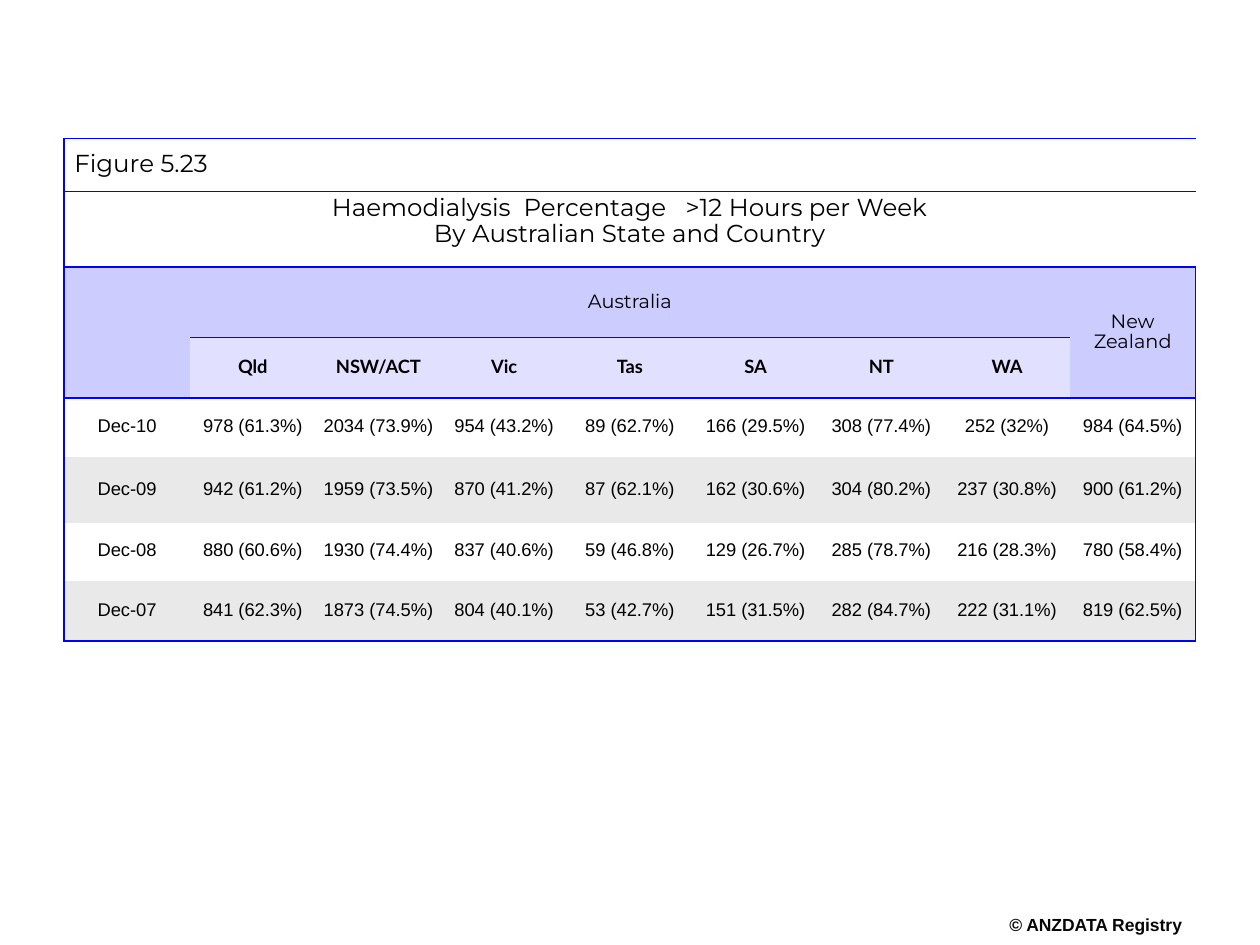
from lxml import etree
from pptx import Presentation
from pptx.dml.color import RGBColor
from pptx.enum import text
from pptx.oxml import ns
from pptx.util import Inches, Pt

BLACK = RGBColor(0x00, 0x00, 0x00)
NEAR_BLACK = RGBColor(0x08, 0x08, 0x08)
BLUE = RGBColor(0x00, 0x00, 0xFF)
LAVENDER = RGBColor(0xCC, 0xCC, 0xFF)
PALE_LAVENDER = RGBColor(0xE1, 0xE1, 0xFF)
GREY = RGBColor(0xE9, 0xE9, 0xE9)

FIGURE = "Figure 5.23"
TITLE = ["Haemodialysis  Percentage   >12 Hours per Week", "By Australian State and Country"]
STATES = ["Qld", "NSW/ACT", "Vic", "Tas", "SA", "NT", "WA"]
HOURS = [
    ["Dec-10", "978 (61.3%)", "2034 (73.9%)", "954 (43.2%)", "89 (62.7%)", "166 (29.5%)",
     "308 (77.4%)", "252 (32%)", "984 (64.5%)"],
    ["Dec-09", "942 (61.2%)", "1959 (73.5%)", "870 (41.2%)", "87 (62.1%)", "162 (30.6%)",
     "304 (80.2%)", "237 (30.8%)", "900 (61.2%)"],
    ["Dec-08", "880 (60.6%)", "1930 (74.4%)", "837 (40.6%)", "59 (46.8%)", "129 (26.7%)",
     "285 (78.7%)", "216 (28.3%)", "780 (58.4%)"],
    ["Dec-07", "841 (62.3%)", "1873 (74.5%)", "804 (40.1%)", "53 (42.7%)", "151 (31.5%)",
     "282 (84.7%)", "222 (31.1%)", "819 (62.5%)"],
]
COPYRIGHT = "© ANZDATA Registry"

ROW_HEIGHTS = [0.42, 0.6, 0.56, 0.48, 0.47, 0.52, 0.46, 0.48]
COLUMN_COUNT = len(HOURS[0])
LAST_COLUMN = COLUMN_COUNT - 1
LAST_ROW = len(ROW_HEIGHTS) - 1
HEADER_ROW, STATE_ROW, FIRST_DATA_ROW = 2, 3, 4
MERGES = [
    ((0, 0), (0, LAST_COLUMN)),
    ((1, 0), (1, LAST_COLUMN)),
    ((HEADER_ROW, 0), (STATE_ROW, 0)),
    ((HEADER_ROW, 1), (HEADER_ROW, LAST_COLUMN - 1)),
    ((HEADER_ROW, LAST_COLUMN), (STATE_ROW, LAST_COLUMN)),
]
NO_STYLE = "{2D5ABB26-0587-4C30-8999-92F81FD0307C}"

HEADING_FONT = {"name": "Montserrat", "size": Pt(14), "bold": False}
GROUP_FONT = {"name": "Montserrat", "size": Pt(11), "bold": False}
STATE_FONT = {"name": "Lato", "size": Pt(10.5), "bold": True}
DATA_FONT = {"name": "Arial", "size": Pt(10.5), "bold": False}
FOOTER_FONT = {"name": "Arial", "size": Pt(10), "bold": True}
CENTERED = {"alignment": text.PP_ALIGN.CENTER, "line_spacing": 0.85}
LEFT = {"alignment": text.PP_ALIGN.LEFT, "line_spacing": 0.85}
DATA_PARAGRAPH = {**CENTERED, "space_after": Pt(14)}
SIDES = ("left", "right", "top", "bottom")
CELL_FRAME = {f"margin_{side}": Inches(0.04) for side in SIDES}
CELL_FRAME["vertical_anchor"] = text.MSO_ANCHOR.MIDDLE
FIGURE_FRAME = {**CELL_FRAME, "margin_left": Inches(0.08), "margin_right": Inches(0.08),
                "margin_top": 0, "margin_bottom": 0}
TITLE_FRAME = {**CELL_FRAME, "vertical_anchor": text.MSO_ANCHOR.TOP}
FOOTER_FRAME = {f"margin_{side}": 0 for side in SIDES}
FOOTER_FRAME.update(word_wrap=False, auto_size=text.MSO_AUTO_SIZE.SHAPE_TO_FIT_TEXT)


def apply(target, values):
    for name, value in values.items():
        setattr(target, name, value)


def write_lines(text_frame, lines, font, paragraph_format, color=BLACK):
    for index, line in enumerate(lines):
        paragraph = text_frame.paragraphs[0] if index == 0 else text_frame.add_paragraph()
        apply(paragraph, paragraph_format)
        run = paragraph.add_run()
        run.text = line
        apply(run.font, font)
        run.font.color.rgb = color


def set_borders(cell, row, column):
    edge_column = column in (0, LAST_COLUMN)
    visible = {
        "lnL": column == 0,
        "lnR": column == LAST_COLUMN,
        "lnT": row <= FIRST_DATA_ROW and not (edge_column and row == STATE_ROW),
        "lnB": row in (0, 1, STATE_ROW, LAST_ROW) or (row == HEADER_ROW and not edge_column),
    }
    properties = cell._tc.get_or_add_tcPr()
    for tag, shown in visible.items():
        line = etree.SubElement(properties, ns.qn(f"a:{tag}"), w=str(Pt(1) if shown else 0))
        fill = etree.SubElement(line, ns.qn("a:solidFill" if shown else "a:noFill"))
        if shown:
            etree.SubElement(fill, ns.qn("a:srgbClr"), val=str(BLUE))


def cell_fill(row, column):
    if row < HEADER_ROW:
        return None
    if row < FIRST_DATA_ROW:
        inner_state = row == STATE_ROW and 0 < column < LAST_COLUMN
        return PALE_LAVENDER if inner_state else LAVENDER
    return GREY if (row - FIRST_DATA_ROW) % 2 else None


def add_hours_table(slide):
    frame = slide.shapes.add_table(len(ROW_HEIGHTS), COLUMN_COUNT, Inches(0.51), Inches(1.1),
                                   Inches(8.98), Inches(sum(ROW_HEIGHTS)))
    table = frame.table
    apply(table, {"first_row": False, "horz_banding": False})
    table._tbl.tblPr.find(ns.qn("a:tableStyleId")).text = NO_STYLE
    for row, height in zip(table.rows, ROW_HEIGHTS):
        row.height = Inches(height)
    for row in range(len(ROW_HEIGHTS)):
        for column in range(COLUMN_COUNT):
            cell = table.cell(row, column)
            apply(cell, CELL_FRAME)
            set_borders(cell, row, column)
            color = cell_fill(row, column)
            if color is None:
                cell.fill.background()
            else:
                cell.fill.solid()
                cell.fill.fore_color.rgb = color
    for start, end in MERGES:
        table.cell(*start).merge(table.cell(*end))

    entries = [
        (0, 0, [FIGURE], HEADING_FONT, LEFT),
        (1, 0, TITLE, HEADING_FONT, CENTERED),
        (HEADER_ROW, 1, ["Australia"], GROUP_FONT, CENTERED),
        (HEADER_ROW, LAST_COLUMN, ["New", "Zealand"], GROUP_FONT, CENTERED),
    ]
    entries += [(STATE_ROW, column, [state], STATE_FONT, CENTERED)
                for column, state in enumerate(STATES, 1)]
    entries += [(row, column, [value], DATA_FONT, DATA_PARAGRAPH)
                for row, values in enumerate(HOURS, FIRST_DATA_ROW)
                for column, value in enumerate(values)]
    for row, column, lines, font, paragraph_format in entries:
        write_lines(table.cell(row, column).text_frame, lines, font, paragraph_format)
    apply(table.cell(0, 0), FIGURE_FRAME)
    apply(table.cell(1, 0), TITLE_FRAME)


def add_copyright(slide):
    shape = slide.shapes.add_textbox(Inches(7.99), Inches(7.28), Inches(1.41), Inches(0.17))
    apply(shape.text_frame, FOOTER_FRAME)
    write_lines(shape.text_frame, [COPYRIGHT], FOOTER_FONT, CENTERED, NEAR_BLACK)


def main():
    presentation = Presentation()
    apply(presentation, {"slide_width": Inches(10), "slide_height": Inches(7.5)})
    slide = presentation.slides.add_slide(presentation.slide_layouts[6])
    add_copyright(slide)
    add_hours_table(slide)
    presentation.save("out.pptx")


if __name__ == "__main__":
    main()
